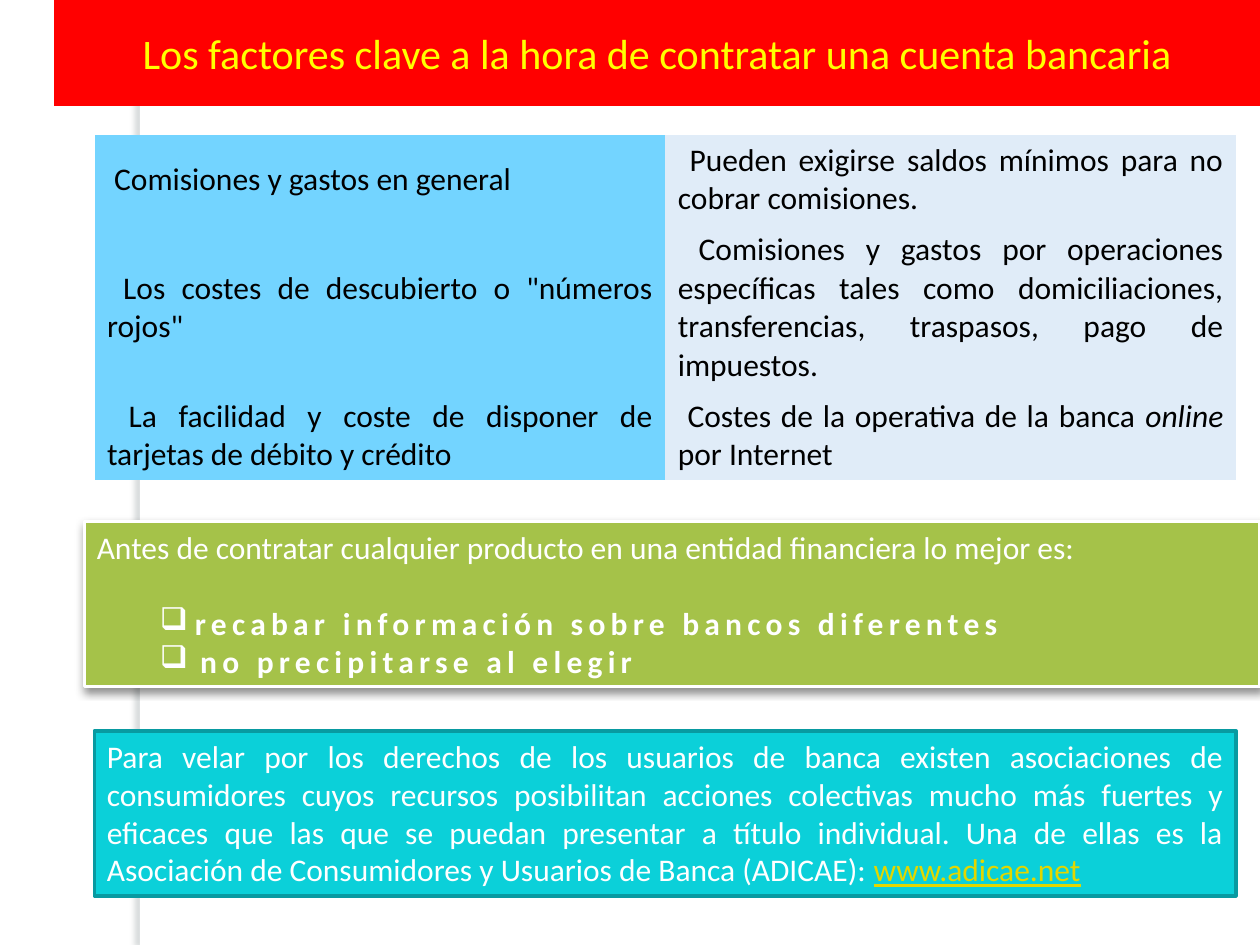
from pptx import Presentation
from pptx.dml.color import RGBColor
from pptx.enum.shapes import MSO_SHAPE
from pptx.enum.text import MSO_ANCHOR, PP_ALIGN
from pptx.oxml import parse_xml
from pptx.oxml.ns import nsdecls, qn
from pptx.util import Inches, Pt

RECT = MSO_SHAPE.RECTANGLE
TOP, MID = MSO_ANCHOR.TOP, MSO_ANCHOR.MIDDLE
LEFT, MIDST, JUST = PP_ALIGN.LEFT, PP_ALIGN.CENTER, PP_ALIGN.JUSTIFY

WHITE = RGBColor(0xFF, 0xFF, 0xFF)
BLACK = RGBColor(0x00, 0x00, 0x00)
RED = RGBColor(0xFF, 0x00, 0x00)
YELLOW = RGBColor(0xFF, 0xFF, 0x00)
SKY = RGBColor(0x73, 0xD4, 0xFF)
PALE = RGBColor(0xE0, 0xEC, 0xF8)
GREEN = RGBColor(0xA5, 0xC2, 0x49)
CYAN = RGBColor(0x0B, 0xD0, 0xD9)
TEAL = RGBColor(0x08, 0x9A, 0xA1)
GOLD = RGBColor(0xE2, 0xD7, 0x00)
GRAY = RGBColor(0x6C, 0x7A, 0x7C)

WIDE, HIGH = 10, 7.5
EDGE, SPAN = 0.75, 9.06
PLAIN = "{2D5ABB26-0587-4C30-8999-92F81FD0307C}"

ROWS = [
    (0.7, "\u00a0Comisiones y gastos en general".replace("\u00a0", " "),
     " Pueden exigirse saldos mínimos para no cobrar comisiones."),
    (1.3, " Los costes de descubierto o \"números rojos\"",
     " Comisiones y gastos por operaciones específicas tales como "
     "domiciliaciones, transferencias, traspasos, pago de impuestos."),
    (0.7, " La facilidad y coste de disponer de tarjetas de débito y crédito",
     [" Costes de la operativa de la banca ",
      ("online", {"italic": True}), " por Internet"]),
]
RIGHTS = (
    "Para velar por los derechos de los usuarios de banca existen asociaciones "
    "de consumidores cuyos recursos posibilitan acciones colectivas mucho más "
    "fuertes y eficaces que las que se puedan presentar a título individual. "
    "Una de ellas es la Asociación de Consumidores y Usuarios de Banca (ADICAE): "
)


def write(para, text, size=18, color=WHITE, align=LEFT, before=0, mark=None):
    """Fill a paragraph with a string or a list of strings and styled runs."""
    if mark:
        props = para._p.get_or_add_pPr()
        props.set("marL", str(Inches(0.5)))
        props.set("indent", "0")
        props.append(parse_xml(f'<a:buChar {nsdecls("a")} char="{mark}"/>'))
    para.alignment = align
    para.space_before = Pt(before)
    for part in [text] if isinstance(text, str) else text:
        words, style = (part, {}) if isinstance(part, str) else part
        run = para.add_run()
        run.text = words
        font = run.font
        font.name, font.size = "Calibri", Pt(size)
        font.color.rgb = style.get("color", color)
        font.bold = style.get("bold", False)
        font.italic = style.get("italic", False)
        font.underline = style.get("line", False)
        if "space" in style:
            run._r.get_or_add_rPr().set("spc", str(style["space"] * 100))


def paint(shape, fill, line=None, anchor=TOP):
    """Set the fill, line and text frame of a shape."""
    shape.fill.solid()
    shape.fill.fore_color.rgb = fill
    if line:
        shape.line.color.rgb = line
        shape.line.width = Pt(2)
    else:
        shape.line.fill.background()
    shape.text_frame.word_wrap = True
    shape.text_frame.vertical_anchor = anchor


def box(slide, x, y, wide, high, fill, line=None):
    """Add a flat rectangle."""
    shape = slide.shapes.add_shape(
        RECT, Inches(x), Inches(y), Inches(wide), Inches(high))
    shape.shadow.inherit = False
    paint(shape, fill, line)
    return shape


def shade(shape, color, alpha, blur, dist, angle):
    """Give a shape an outer shadow."""
    shape._element.spPr.find(qn("a:effectLst")).append(parse_xml(
        f'<a:outerShdw {nsdecls("a")} blurRad="{Pt(blur)}" dist="{Pt(dist)}" '
        f'dir="{angle * 60000}" algn="ctr" rotWithShape="0">'
        f'<a:srgbClr val="{color}"><a:alpha val="{alpha * 1000}"/></a:srgbClr>'
        '</a:outerShdw>'))


def head(slide, text):
    """Place the title on its red band."""
    title = slide.shapes.title
    title.left, title.top = Inches(0.43), 0
    title.width, title.height = Inches(WIDE - 0.43), Inches(0.84)
    paint(title, RED, anchor=MID)
    write(title.text_frame.paragraphs[0], text, size=24, color=YELLOW, align=MIDST)


def stripe(slide):
    """Put the shaded vertical stripe behind everything else."""
    bar = box(slide, 1.11, 0, 0.08, HIGH, WHITE)
    shade(bar, GRAY, 25, 3, 3, 180)
    slide.shapes._spTree.insert(2, bar._element)


def grid(slide):
    """Add the table of costs."""
    high = sum(row[0] for row in ROWS)
    table = slide.shapes.add_table(
        len(ROWS), 2, Inches(EDGE), Inches(1.07), Inches(SPAN), Inches(high)).table
    table.first_row = table.horz_banding = False
    table._tbl.tblPr.find(qn("a:tableStyleId")).text = PLAIN
    for row, (tall, *texts) in zip(table.rows, ROWS):
        row.height = Inches(tall)
        for cell, text, fill in zip(row.cells, texts, (SKY, PALE)):
            cell.fill.solid()
            cell.fill.fore_color.rgb = fill
            cell.vertical_anchor = MID
            write(cell.text_frame.paragraphs[0], text, color=BLACK, align=JUST)


def advice(slide):
    """Add the green panel with its two tips."""
    panel = box(slide, 0.67, 4.14, WIDE - 0.67, 1.31, GREEN, WHITE)
    shade(panel, BLACK, 43, 5, 2, 90)
    frame = panel.text_frame
    write(frame.paragraphs[0], "Antes de contratar cualquier producto en una "
          "entidad financiera lo mejor es:")
    loud = {"bold": True, "space": 3}
    tips = [[" ", ("recabar información sobre bancos diferentes", loud)],
            [(" no precipitarse al elegir", loud)]]
    for tip, gap in zip(tips, (22, 0)):
        write(frame.add_paragraph(), tip, before=gap, mark="❑")


def rights(slide):
    """Add the cyan panel on consumer groups."""
    panel = box(slide, EDGE, 5.8, SPAN, 1.31, CYAN, TEAL)
    link = ("www.adicae.net", {"color": GOLD, "line": True})
    write(panel.text_frame.paragraphs[0], [RIGHTS, link], align=JUST)


def main():
    """Build and save the slide."""
    deck = Presentation()
    deck.slide_width, deck.slide_height = Inches(WIDE), Inches(HIGH)
    slide = deck.slides.add_slide(deck.slide_layouts[5])
    head(slide, "Los factores clave a la hora de contratar una cuenta bancaria")
    stripe(slide)
    grid(slide)
    advice(slide)
    rights(slide)
    deck.save("out.pptx")


if __name__ == "__main__":
    main()
